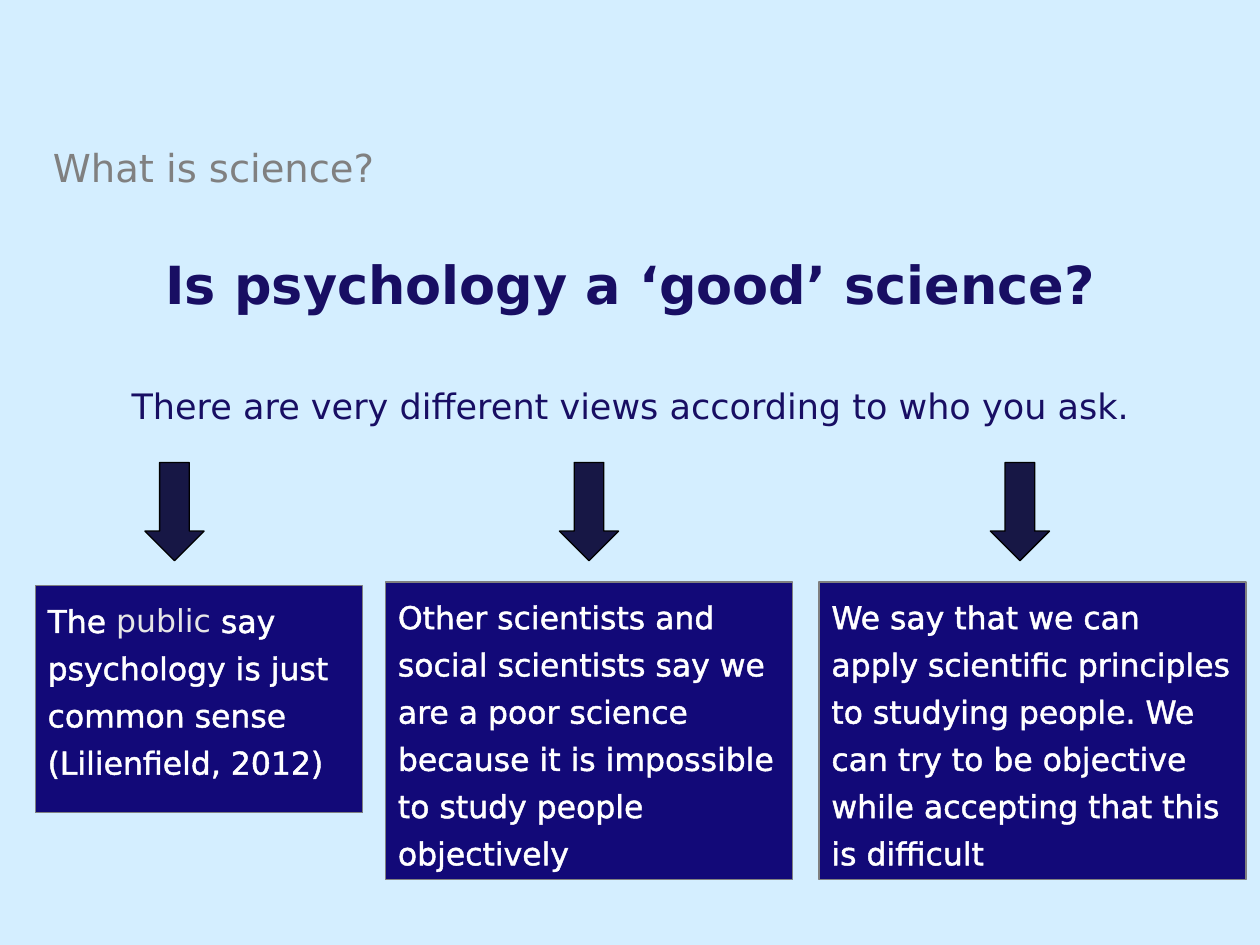
import pptx
import pptx.util
import pptx.dml.color
import pptx.enum.shapes
import pptx.enum.text
import lxml.etree

Inches = pptx.util.Inches
Pt = pptx.util.Pt
kinds = pptx.enum.shapes.MSO_SHAPE
align = pptx.enum.text.PP_ALIGN
anchor = pptx.enum.text.MSO_ANCHOR


def color(code):
    return pptx.dml.color.RGBColor.from_string(code)


def write(shape, runs, look, frame, para):
    body = shape.text_frame
    for key, value in frame.items():
        setattr(body, key, value)
    line = body.paragraphs[0]
    for key, value in para.items():
        setattr(line, key, value)
    for text, code, edge in runs:
        run = line.add_run()
        run.text = text
        for key, value in look.items():
            setattr(run.font, key, value)
        run.font.color.rgb = color(code)
        if edge:
            tag = pptx.oxml.ns.qn
            props = run.font._element
            ln = lxml.etree.Element(tag("a:ln"), w=str(Pt(1.45)))
            fill = lxml.etree.SubElement(ln, tag("a:solidFill"))
            lxml.etree.SubElement(fill, tag("a:srgbClr"), val=edge)
            props.insert(0, ln)


deck = pptx.Presentation()
deck.slide_width = Inches(10)
deck.slide_height = Inches(7.5)
slide = deck.slides.add_slide(deck.slide_layouts[6])
slide.background.fill.solid()
slide.background.fill.fore_color.rgb = color("D4EEFF")

font = "DejaVu Sans"
navy = "180E63"
white = "FFFFFF"
flush = {"margin_left": 0, "margin_right": 0, "margin_top": 0, "margin_bottom": 0}
middle = {"word_wrap": True, "vertical_anchor": anchor.MIDDLE}
top = {"word_wrap": True, "vertical_anchor": anchor.TOP, "margin_top": Inches(0.05)}

heads = [
    ("What is science?", (0.42, 1.02, 3.75, 0.49), "808080",
     {"size": Pt(22)}, {**middle, **flush}, {"line_spacing": 1.35}),
    ("Is psychology a ‘good’ science?", (0.42, 1.75, 9.17, 1), navy,
     {"size": Pt(30), "bold": True}, middle, {"alignment": align.CENTER}),
    ("There are very different views according to who you ask.",
     (0.42, 2.92, 9.17, 0.6), navy, {"size": Pt(20)}, top,
     {"alignment": align.CENTER, "line_spacing": 1.25}),
]
for text, place, code, look, frame, para in heads:
    box = slide.shapes.add_textbox(*map(Inches, place))
    write(box, [(text, code, None)], {"name": font, **look}, frame, para)

views = [
    (1.15, (0.28, 4.65, 2.6, 1.8), [
        ("The ", white, white),
        ("public", "E6E6E6", None),
        (" say psychology is just common sense (Lilienfield, 2012)", white, white)]),
    (4.44, (3.06, 4.62, 3.23, 2.36), [
        ("Other scientists and social scientists say we are a poor science "
         "because it is impossible to study people objectively", white, white)]),
    (7.86, (6.5, 4.62, 3.39, 2.36), [
        ("We say that we can apply scientific principles to studying people. "
         "We can try to be objective while accepting that this is difficult",
         white, white)]),
]
for left, place, runs in views:
    parts = [
        (kinds.RECTANGLE, place, "120978", "808080", runs),
        (kinds.DOWN_ARROW, (left, 3.67, 0.47, 0.78), "171745", "000000", []),
    ]
    for kind, spot, fill, edge, words in parts:
        shape = slide.shapes.add_shape(kind, *map(Inches, spot))
        shape.shadow.inherit = False
        shape.fill.solid()
        shape.fill.fore_color.rgb = color(fill)
        shape.line.color.rgb = color(edge)
        shape.line.width = Pt(0.75)
        write(shape, words, {"name": font, "size": Pt(18)}, top,
              {"alignment": align.LEFT, "line_spacing": 1.25})

deck.save("out.pptx")
